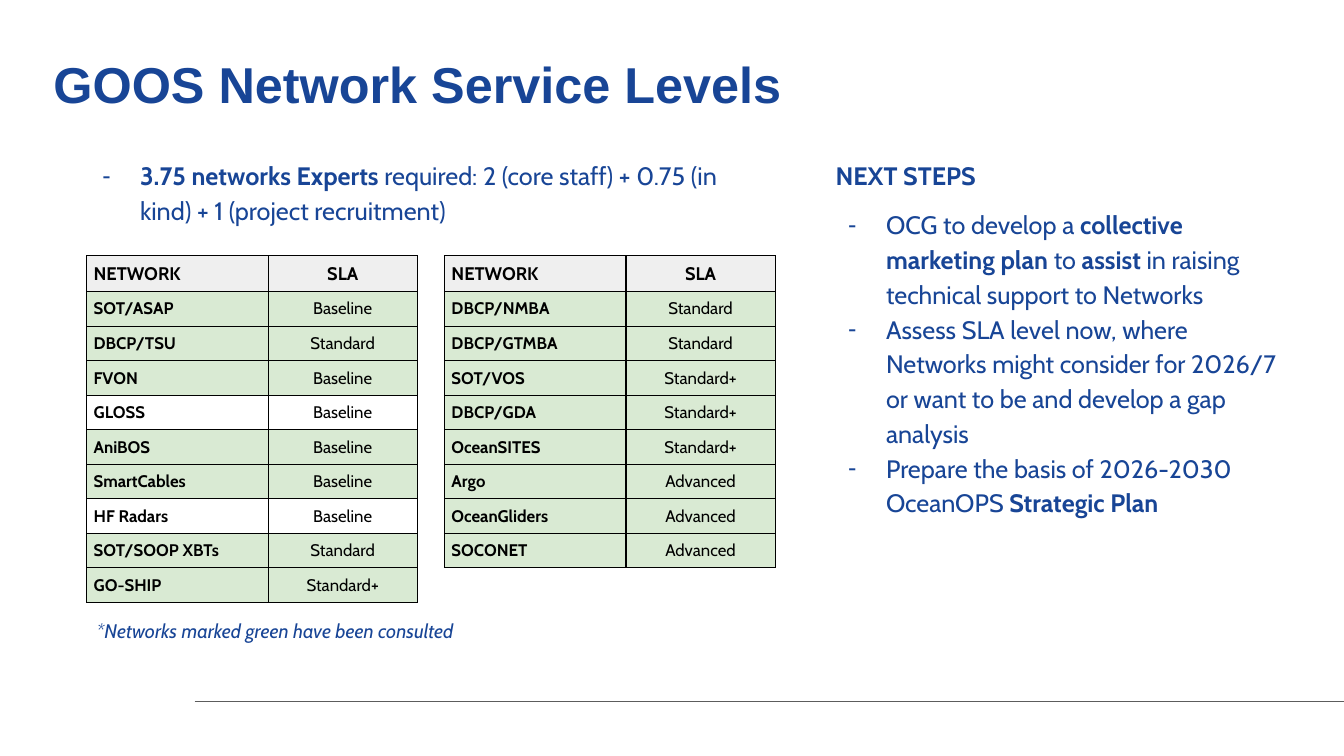
from lxml import etree
from pptx import Presentation
from pptx import util as u
from pptx.dml.color import RGBColor
from pptx.enum import shapes, text
from pptx.oxml import ns

COLORS = {
    "blue": "184596",
    "black": "000000",
    "rule": "5C5C5C",
    "header": "EFEFEF",
    "consulted": "D9EAD3",
}

LEFT_NETWORKS = [
    ("SOT/ASAP", "Baseline"),
    ("DBCP/TSU", "Standard"),
    ("FVON", "Baseline"),
    ("GLOSS", "Baseline"),
    ("AniBOS", "Baseline"),
    ("SmartCables", "Baseline"),
    ("HF Radars", "Baseline"),
    ("SOT/SOOP XBTs", "Standard"),
    ("GO-SHIP", "Standard+"),
]
RIGHT_NETWORKS = [
    ("DBCP/NMBA", "Standard"),
    ("DBCP/GTMBA", "Standard"),
    ("SOT/VOS", "Standard+"),
    ("DBCP/GDA", "Standard+"),
    ("OceanSITES", "Standard+"),
    ("Argo", "Advanced"),
    ("OceanGliders", "Advanced"),
    ("SOCONET", "Advanced"),
]
NOT_CONSULTED = {"GLOSS", "HF Radars"}

EXPERTS = [
    ("3.75 networks Experts", True),
    (" required: 2 (core staff) + 0.75 (in kind) + 1 (project recruitment)", False),
]
NEXT_STEPS = [
    [
        ("OCG to develop a ", False),
        ("collective marketing plan ", True),
        ("to ", False),
        ("assist ", True),
        ("in raising technical support to Networks", False),
    ],
    [(
        "Assess SLA level now, where Networks might consider for 2026/7 "
        "or want to be and develop a gap analysis",
        False,
    )],
    [
        ("Prepare the basis of 2026-2030 OceanOPS ", False),
        ("Strategic Plan", True),
    ],
]


def rgb(name):
    return RGBColor.from_string(COLORS[name])


def add_element(parent, tag, **attributes):
    return etree.SubElement(parent, ns.qn(tag), attributes)


def write(para, spans, size=18, font="Cabin", color="blue", italic=False,
          align=text.PP_ALIGN.LEFT, spacing=1.0, before=0, after=0, dash=False):
    properties = para._p.get_or_add_pPr()
    properties.set("marL", str(u.Pt(36 if dash else 0)))
    properties.set("indent", str(u.Pt(-27 if dash else 0)))
    if dash:
        tint = add_element(properties, "a:buClr")
        add_element(tint, "a:srgbClr", val=COLORS[color])
        add_element(properties, "a:buChar", char="-")
    else:
        add_element(properties, "a:buNone")
    para.alignment = align
    para.line_spacing = spacing
    para.space_before = u.Pt(before)
    para.space_after = u.Pt(after)
    para.font.size = u.Pt(size)
    for words, bold in spans:
        span = para.add_run()
        span.text = words
        span.font.name = font
        span.font.size = u.Pt(size)
        span.font.bold = bold
        span.font.italic = italic
        span.font.color.rgb = rgb(color)


class Page:
    def __init__(self, deck, layout):
        self.page = deck.slides.add_slide(deck.slide_layouts[layout])

    def frame(self, box, area, margins, anchor=text.MSO_ANCHOR.TOP):
        box.left, box.top, box.width, box.height = map(u.Pt, area)
        frame = box.text_frame
        frame.word_wrap = True
        frame.auto_size = text.MSO_AUTO_SIZE.NONE
        frame.vertical_anchor = anchor
        frame.margin_left = frame.margin_right = u.Pt(margins[0])
        frame.margin_top = frame.margin_bottom = u.Pt(margins[1])
        return frame

    def title(self, words, area):
        frame = self.frame(self.page.shapes.title, area, (0, 0), text.MSO_ANCHOR.MIDDLE)
        write(frame.paragraphs[0], [(words, True)], size=36, font="Arial", spacing=0.85)

    def body(self, index, area, items, heading=None):
        frame = self.frame(self.page.placeholders[index], area, (7.2, 3.6))
        para = frame.paragraphs[0]
        if heading:
            write(para, [(heading, True)], spacing=1.15)
        for number, spans in enumerate(items):
            first = number == 0
            if heading or not first:
                para = frame.add_paragraph()
            write(para, spans, spacing=1.15, dash=True, before=10 if heading and first else 0)

    def note(self, words, area):
        box = self.page.shapes.add_textbox(*map(u.Pt, area))
        frame = self.frame(box, area, (7.2, 3.6))
        write(frame.paragraphs[0], [(words, False)], size=14, italic=True, spacing=1.15, after=10)

    def line(self, start, end):
        line = self.page.shapes.add_connector(
            shapes.MSO_CONNECTOR.STRAIGHT, *map(u.Pt, start + end))
        line.line.color.rgb = rgb("rule")
        line.line.width = u.Pt(0.75)
        add_element(line._element.spPr, "a:effectLst")

    def cell(self, cell, words, fill, **style):
        cell.margin_left = cell.margin_right = u.Pt(5)
        cell.margin_top = cell.margin_bottom = u.Pt(5)
        properties = cell._tc.get_or_add_tcPr()
        for side in "LRTB":
            border = add_element(properties, f"a:ln{side}", w=str(u.Pt(1)))
            solid = add_element(border, "a:solidFill")
            add_element(solid, "a:srgbClr", val=COLORS["black"])
        if fill:
            cell.fill.solid()
            cell.fill.fore_color.rgb = rgb(fill)
        else:
            cell.fill.background()
        bold = style.pop("bold")
        write(cell.text_frame.paragraphs[0], [(words, bold)], color="black", **style)

    def table(self, left, top, networks):
        rows = [("NETWORK", "SLA")] + networks
        widths = (129.6, 106.6)
        row_height = 20
        box = self.page.shapes.add_table(
            len(rows), 2, u.Pt(left), u.Pt(top),
            u.Pt(sum(widths)), u.Pt(row_height * len(rows)))
        table = box.table
        table.first_row = table.horz_banding = False
        for column, width in zip(table.columns, widths):
            column.width = u.Pt(width)
        for row, (network, level) in enumerate(rows):
            table.rows[row].height = u.Pt(row_height)
            header = row == 0
            fill = "header" if header else "consulted"
            if network in NOT_CONSULTED:
                fill = None
            size = 13 if header else 12
            self.cell(table.cell(row, 0), network, fill, size=size, bold=True)
            self.cell(table.cell(row, 1), level, fill, size=size, bold=header,
                      align=text.PP_ALIGN.CENTER)


def main():
    deck = Presentation()
    deck.slide_width, deck.slide_height = u.Pt(960), u.Pt(540)
    page = Page(deck, 3)
    page.line((139, 501), (960, 501))
    page.title("GOOS Network Service Levels", (38.2, 40.3, 846.7, 45.4))
    page.table(61.9, 182.6, LEFT_NETWORKS)
    page.note("*Networks marked green have been consulted", (61.9, 436.3, 304.6, 28.8))
    page.table(317.5, 182.6, RIGHT_NETWORKS)
    page.body(1, (56.9, 108, 490.3, 70.6), [EXPERTS])
    page.body(2, (589.7, 108, 332.6, 306.7), NEXT_STEPS, heading="NEXT STEPS")
    deck.save("out.pptx")


if __name__ == "__main__":
    main()
